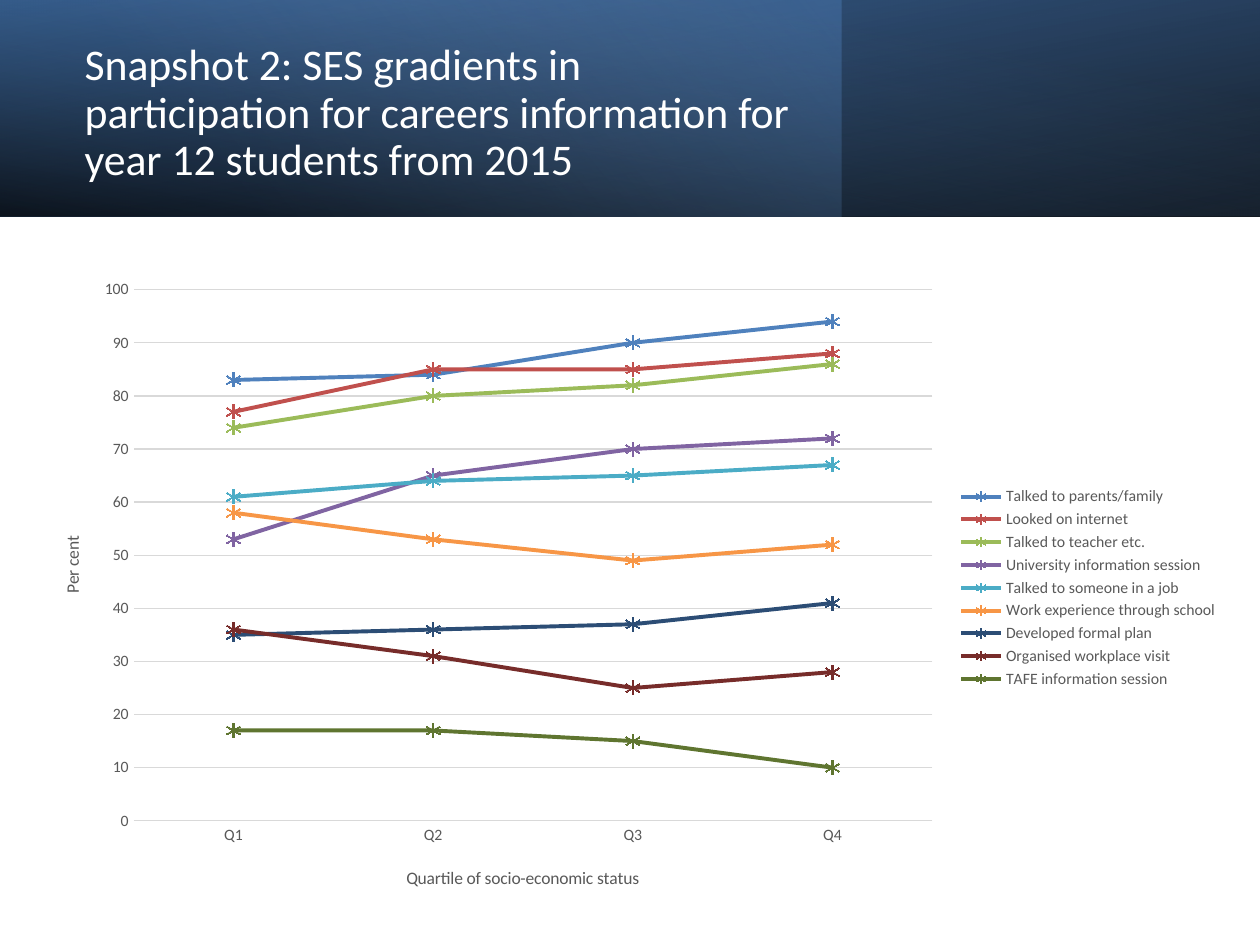
from pptx import Presentation
from pptx.chart.data import CategoryChartData
from pptx.dml.color import RGBColor
from pptx.enum.chart import XL_CHART_TYPE, XL_LEGEND_POSITION, XL_MARKER_STYLE, XL_TICK_MARK
from pptx.enum.shapes import MSO_SHAPE
from pptx.enum.text import MSO_ANCHOR, PP_ALIGN
from pptx.oxml import parse_xml
from pptx.oxml.ns import nsdecls, qn
from pptx.util import Pt

PX = 914400 // 126
WIDTH, HEIGHT, BANNER_H = 1260, 945, 217
CHART = (29, 268, 1203, 640)
FONT = "Calibri"

BLACK = RGBColor(0x00, 0x00, 0x00)
WHITE = RGBColor(0xFF, 0xFF, 0xFF)
NAVY = RGBColor(0x37, 0x60, 0x92)
BLUE = RGBColor(0x4F, 0x81, 0xBD)
PALE_BLUE = RGBColor(0x95, 0xB3, 0xD7)
GREY = RGBColor(0x59, 0x59, 0x59)
GRID = RGBColor(0xD9, 0xD9, 0xD9)

QUARTILES = ["Q1", "Q2", "Q3", "Q4"]
SERIES = [
    ("Talked to parents/family", (83, 84, 90, 94), BLUE),
    ("Looked on internet", (77, 85, 85, 88), RGBColor(0xC0, 0x50, 0x4D)),
    ("Talked to teacher etc.", (74, 80, 82, 86), RGBColor(0x9B, 0xBB, 0x59)),
    ("University information session", (53, 65, 70, 72), RGBColor(0x80, 0x64, 0xA2)),
    ("Talked to someone in a job", (61, 64, 65, 67), RGBColor(0x4B, 0xAC, 0xC6)),
    ("Work experience through school", (58, 53, 49, 52), RGBColor(0xF7, 0x96, 0x46)),
    ("Developed formal plan", (35, 36, 37, 41), RGBColor(0x2C, 0x4D, 0x75)),
    ("Organised workplace visit", (36, 31, 25, 28), RGBColor(0x77, 0x2C, 0x2A)),
    ("TAFE information session", (17, 17, 15, 10), RGBColor(0x5F, 0x75, 0x30)),
]


def box(*lengths):
    return [v * PX for v in lengths]


def set_font(font, size, color):
    font.name, font.size, font.bold = FONT, Pt(size), False
    font.color.rgb = color


def put_text(tf, text, size=10, color=GREY, align=None, spacing=None, after=None):
    tf.text = text
    p = tf.paragraphs[0]
    p.alignment, p.line_spacing = align, spacing
    if after is not None:
        p.space_after = Pt(after)
    set_font(p.runs[0].font, size, color)


def add_gradient(slide, width, stops, angle, flip=False, rotation=0):
    s = slide.shapes.add_shape(MSO_SHAPE.RECTANGLE, *box(0, 0, width, BANNER_H))
    s.shadow.inherit = False
    s.line.fill.background()
    s.rotation = rotation
    spPr = s._element.spPr
    if flip:
        spPr.find(qn("a:xfrm")).set("flipH", "1")
    s.fill.gradient()
    gs = "".join(
        f'<a:gs pos="{pos * 1000}"><a:srgbClr val="{color}">'
        f'<a:alpha val="{alpha * 1000}"/></a:srgbClr></a:gs>'
        for pos, color, alpha in stops
    )
    fill = parse_xml(
        f'<a:gradFill {nsdecls("a")} rotWithShape="1"><a:gsLst>{gs}</a:gsLst>'
        f'<a:lin ang="{angle * 60000}" scaled="0"/></a:gradFill>'
    )
    spPr.replace(spPr.find(qn("a:gradFill")), fill)


def add_title(slide, text):
    s = slide.shapes.title
    s.left, s.top, s.width, s.height = box(72, 34, 730, 160)
    tf = s.text_frame
    tf.word_wrap = True
    tf.vertical_anchor = MSO_ANCHOR.MIDDLE
    put_text(tf, text, size=25, color=WHITE, align=PP_ALIGN.LEFT, spacing=0.9, after=6)
    slide.shapes._spTree.append(s._element)


def make_layout(left, top, width=None, height=None, inner=False):
    x, y, w, h = CHART
    parts = [("xMode", "edge"), ("yMode", "edge"),
             ("x", round((left - x) / w, 3)), ("y", round((top - y) / h, 3))]
    if width:
        parts += [("w", round(width / w, 3)), ("h", round(height / h, 3))]
    if inner:
        parts.insert(0, ("layoutTarget", "inner"))
    body = "".join(f'<c:{tag} val="{val}"/>' for tag, val in parts)
    return parse_xml(f'<c:layout {nsdecls("c")}><c:manualLayout>{body}</c:manualLayout></c:layout>')


def place(element, layout, after=None):
    old = element.find(qn("c:layout"))
    if old is not None:
        element.remove(old)
    if after is None:
        element.insert(0, layout)
    else:
        element.find(qn(after)).addnext(layout)


def format_axis(axis, title, left, top):
    axis.major_tick_mark = axis.minor_tick_mark = XL_TICK_MARK.NONE
    set_font(axis.tick_labels.font, 9, GREY)
    put_text(axis.axis_title.text_frame, title)
    place(axis.axis_title._element, make_layout(left, top), after="c:tx")


def add_line_chart(slide):
    data = CategoryChartData(number_format="0")
    data.categories = QUARTILES
    for name, values, _ in SERIES:
        data.add_series(name, values)
    chart = slide.shapes.add_chart(XL_CHART_TYPE.LINE_MARKERS, *box(*CHART), data).chart
    chart.has_title = False
    set_font(chart.font, 10, BLACK)
    plot = chart.plots[0]
    plot.vary_by_categories = False
    place(chart._chartSpace.chart.plotArea, make_layout(134, 290, 799, 531, inner=True))

    format_axis(chart.category_axis, "Quartile of socio-economic status", 403, 863)
    format_axis(chart.value_axis, "Per cent", 58, 533)
    value_axis = chart.value_axis
    value_axis.minimum_scale, value_axis.maximum_scale, value_axis.major_unit = 0, 100, 10
    value_axis.has_major_gridlines = True
    value_axis.format.line.fill.background()
    for line in (chart.category_axis.format.line, value_axis.major_gridlines.format.line):
        line.color.rgb, line.width = GRID, Pt(0.75)

    chart.has_legend = True
    legend = chart.legend
    legend.position = XL_LEGEND_POSITION.RIGHT
    legend.include_in_layout = False
    set_font(legend.font, 9, GREY)
    place(legend._element, make_layout(956, 483, 264, 210), after="c:legendPos")

    for series, (_, _, color) in zip(plot.series, SERIES):
        series.smooth = False
        series.format.line.color.rgb = color
        series.format.line.width = Pt(2.25)
        marker = series.marker
        marker.style, marker.size = XL_MARKER_STYLE.STAR, 8
        marker.format.fill.background()
        marker.format.line.color.rgb = color
        marker.format.line.width = Pt(0.75)


def main():
    prs = Presentation()
    prs.slide_width, prs.slide_height = box(WIDTH, HEIGHT)
    prs.slide_width, prs.slide_height = 9144000, 6858000
    slide = prs.slides.add_slide(prs.slide_layouts[5])
    add_gradient(slide, WIDTH, [(0, BLACK, 96), (100, NAVY, 100)], 100, flip=True, rotation=180)
    add_gradient(slide, 841, [(0, BLUE, 41), (74, PALE_BLUE, 0)], 140)
    add_gradient(slide, WIDTH, [(0, BLACK, 63), (78, BLUE, 15)], 260, flip=True)
    add_title(slide, "Snapshot 2: SES gradients in participation for careers information "
                     "for year 12 students from 2015")
    add_line_chart(slide)
    prs.save("out.pptx")


if __name__ == "__main__":
    main()
